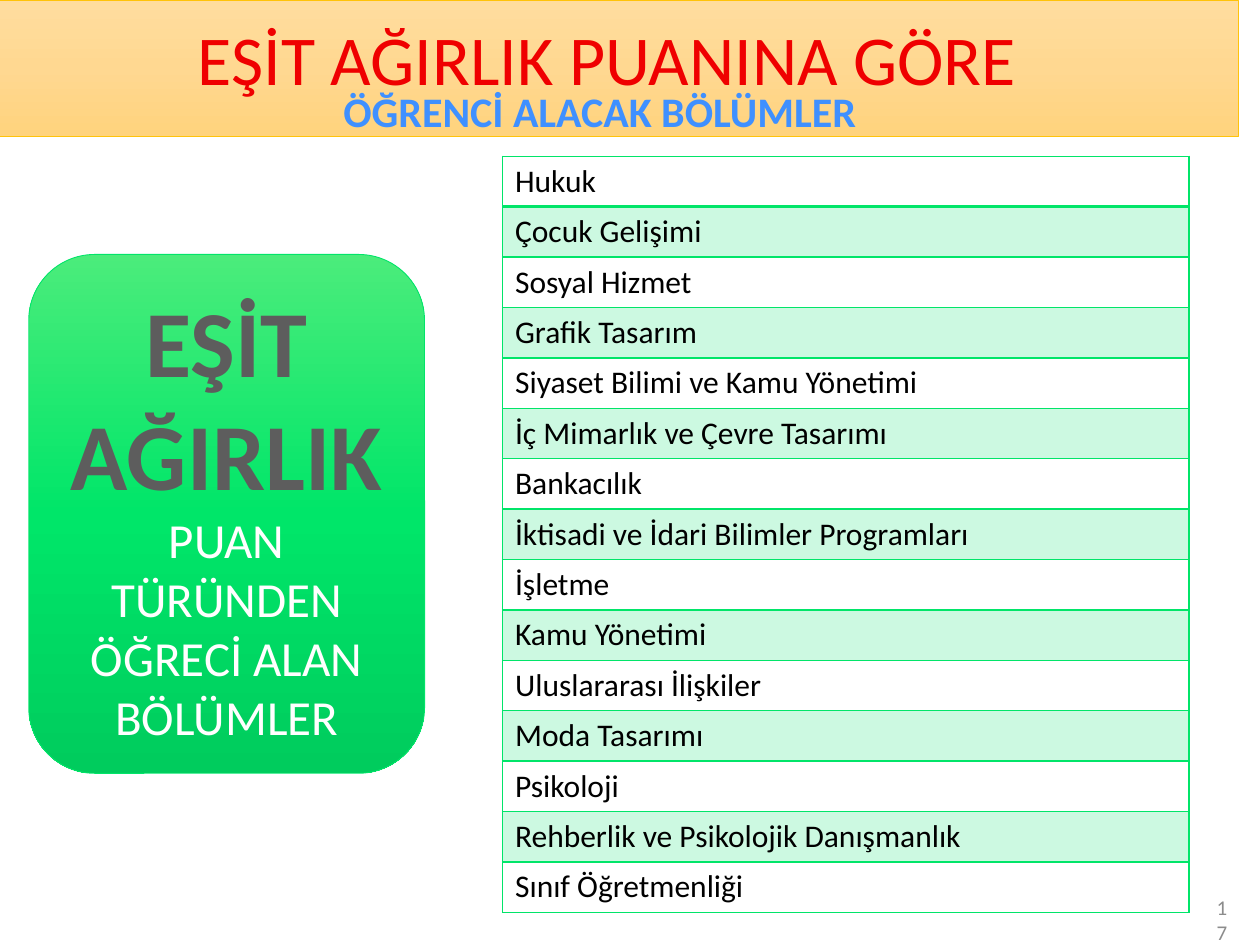
from lxml import etree
from pptx import Presentation
from pptx import util as u
from pptx.dml.color import RGBColor
from pptx.enum import shapes, text
from pptx.oxml.ns import qn

FONT = "Calibri"
GREEN = RGBColor(0x01, 0xE5, 0x69)
GREEN_LIGHT = RGBColor(0x4B, 0xEC, 0x7B)
GREEN_MID = RGBColor(0x00, 0xE6, 0x69)
GREEN_DARK = RGBColor(0x00, 0xCC, 0x5D)
GOLD = RGBColor(0xFF, 0xC3, 0x0B)
GOLD_LIGHT = RGBColor(0xFF, 0xDD, 0x9F)
GOLD_MID = RGBColor(0xFF, 0xD8, 0x91)
GOLD_DARK = RGBColor(0xFF, 0xD3, 0x7D)
RED = RGBColor(0xEF, 0x00, 0x00)
BLUE = RGBColor(0x3F, 0x90, 0xFF)
DARK_GREY = RGBColor(0x5D, 0x5D, 0x5D)
GREY = RGBColor(0x8C, 0x8C, 0x8C)
WHITE = RGBColor(0xFF, 0xFF, 0xFF)
BLACK = RGBColor(0, 0, 0)

DEPARTMENTS = [
    "Hukuk", "Çocuk Gelişimi", "Sosyal Hizmet", "Grafik Tasarım",
    "Siyaset Bilimi ve Kamu Yönetimi", "İç Mimarlık ve Çevre Tasarımı",
    "Bankacılık", "İktisadi ve İdari Bilimler Programları", "İşletme",
    "Kamu Yönetimi", "Uluslararası İlişkiler", "Moda Tasarımı", "Psikoloji",
    "Rehberlik ve Psikolojik Danışmanlık", "Sınıf Öğretmenliği",
]


def cm_box(*lengths):
    return [u.Cm(length) for length in lengths]


def format_run(run, size, color, bold=False):
    run.font.name = FONT
    run.font.size = u.Pt(size)
    run.font.bold = bold
    run.font.color.rgb = color


def fill_frame(frame, parts, align, anchor):
    """Write one paragraph of (text, size, colour, bold) parts."""
    frame.word_wrap = True
    frame.auto_size = text.MSO_AUTO_SIZE.NONE
    frame.vertical_anchor = anchor
    paragraph = frame.paragraphs[0]
    paragraph.alignment = align
    for words, *style in parts:
        run = paragraph.add_run()
        run.text = words
        format_run(run, *style)


def add_gradient_shape(slide, preset, box, colors, outline):
    """Add a shape whose colours run evenly from top to bottom."""
    shape = slide.shapes.add_shape(preset, *cm_box(*box))
    shape.shadow.inherit = False
    shape.line.color.rgb = outline
    shape.line.width = u.Pt(0.5)
    shape.fill.gradient()
    shape.fill.gradient_angle = 270
    stops = shape.fill._fill._gradFill.find(qn("a:gsLst"))
    for stop in list(stops):
        stops.remove(stop)
    for index, color in enumerate(colors):
        position = 100000 * index // (len(colors) - 1)
        stop = etree.SubElement(stops, qn("a:gs"), pos=str(position))
        etree.SubElement(stop, qn("a:srgbClr"), val=str(color))
    return shape


def add_label(slide, box, part, align, anchor):
    label = slide.shapes.add_textbox(*cm_box(*box))
    fill_frame(label.text_frame, [part], align, anchor)


def place_title(slide):
    title = slide.shapes.title
    title.left, title.top, title.width, title.height = cm_box(-0.46, 0.18, 25.4, 3)
    fill_frame(title.text_frame, [("EŞİT AĞIRLIK PUANINA GÖRE", 40, RED)],
               text.PP_ALIGN.CENTER, text.MSO_ANCHOR.TOP)
    slide.shapes._spTree.append(title._element)  # in front of the band


def set_borders(cell, widths):
    """Draw the cell's sides; widths are in points by side letter."""
    properties = cell._tc.get_or_add_tcPr()
    for side, width in widths.items():
        line = etree.SubElement(properties, qn(f"a:ln{side}"), w=str(u.Pt(width)))
        fill = etree.SubElement(line, qn("a:solidFill"))
        etree.SubElement(fill, qn("a:srgbClr"), val=str(GREEN))


def tint_cell(cell):
    """Fill the cell with green at 20 % opacity."""
    cell.fill.solid()
    cell.fill.fore_color.rgb = GREEN
    color = cell._tc.tcPr.find(qn("a:solidFill")).find(qn("a:srgbClr"))
    etree.SubElement(color, qn("a:alpha"), val="20000")


def add_department_table(slide):
    frame = slide.shapes.add_table(len(DEPARTMENTS), 1,
                                   *cm_box(10.13, 3.15, 13.84, 15.24))
    table = frame.table
    table.first_row = table.horz_banding = False
    for index, department in enumerate(DEPARTMENTS):
        cell = table.cell(index, 0)
        cell.text = department
        cell.vertical_anchor = text.MSO_ANCHOR.MIDDLE
        cell.margin_top = cell.margin_bottom = u.Cm(0.1)
        format_run(cell.text_frame.paragraphs[0].runs[0], 18, BLACK)
        set_borders(cell, {"L": 1, "R": 1, "T": 2 if index == 1 else 1,
                           "B": 2 if index == 0 else 1})
        if index % 2:
            tint_cell(cell)
        else:
            cell.fill.background()


def main():
    deck = Presentation()
    deck.slide_width, deck.slide_height = cm_box(25.4, 19.05)
    slide = deck.slides.add_slide(deck.slide_layouts[5])
    center, middle = text.PP_ALIGN.CENTER, text.MSO_ANCHOR.MIDDLE

    score_panel = add_gradient_shape(
        slide, shapes.MSO_SHAPE.ROUNDED_RECTANGLE, (0.58, 5.13, 7.98, 10.46),
        (GREEN_LIGHT, GREEN_MID, GREEN_DARK), GREEN)
    fill_frame(score_panel.text_frame, [
        ("EŞİT AĞIRLIK", 54, DARK_GREY, True),
        (" ", 28, DARK_GREY, True),
        ("PUAN TÜRÜNDEN ÖĞRECİ ALAN BÖLÜMLER", 28, WHITE),
    ], center, middle)

    add_gradient_shape(slide, shapes.MSO_SHAPE.RECTANGLE, (-0.43, 0, 25.4, 2.75),
                       (GOLD_LIGHT, GOLD_MID, GOLD_DARK), GOLD)
    place_title(slide)
    add_label(slide, (0.69, 1.6, 22.8, 1.28),
              ("ÖĞRENCİ ALACAK BÖLÜMLER", 24, BLUE, True),
              center, text.MSO_ANCHOR.TOP)
    add_label(slide, (24.1, 18.03, 0.89, 1.02), ("17", 12, GREY),
              text.PP_ALIGN.RIGHT, middle)
    add_department_table(slide)
    deck.save("out.pptx")


if __name__ == "__main__":
    main()
